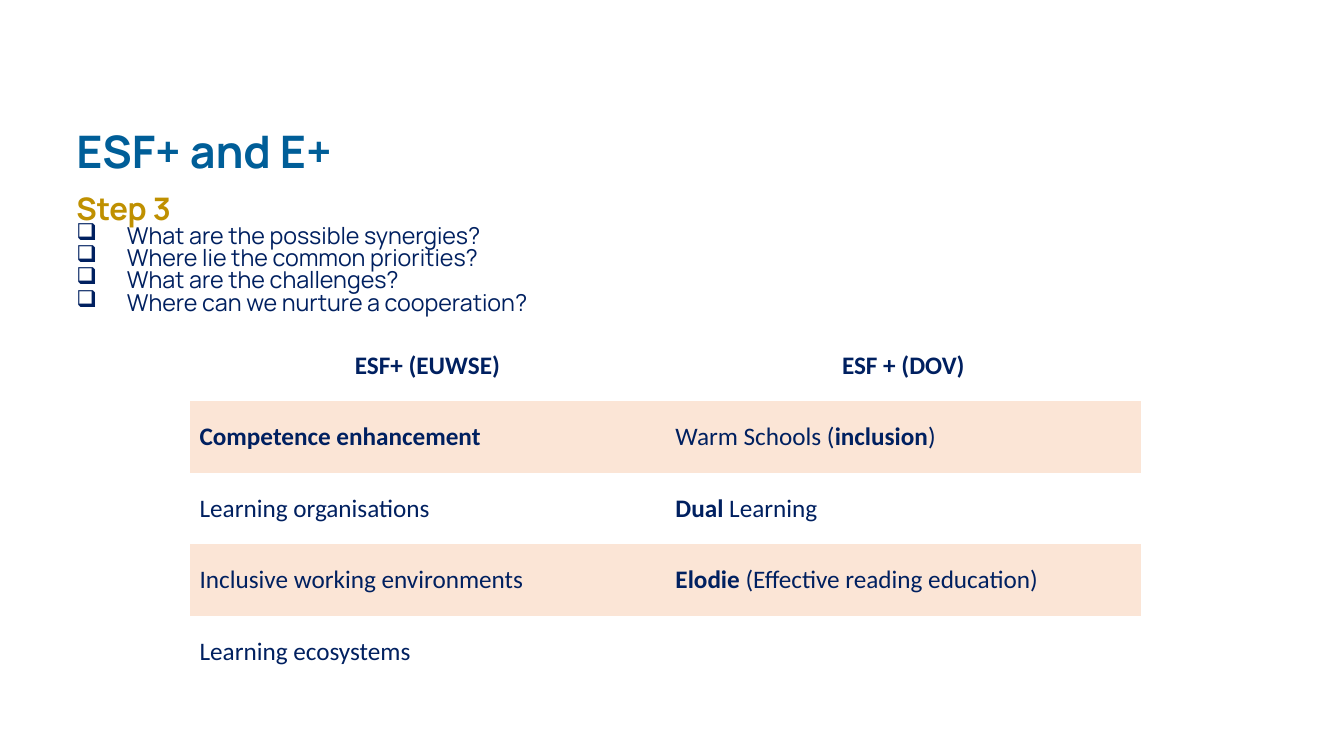
from lxml import etree
from pptx import Presentation
from pptx.dml.color import RGBColor
from pptx.enum.text import MSO_ANCHOR, PP_ALIGN
from pptx.oxml.ns import qn
from pptx.util import Inches, Pt

NAVY, BLUE, GOLD, PEACH = "002060", "005E98", "BF9000", "FBE5D6"
HEAD_FONT, TABLE_FONT = "Manrope", "Calibri"
NO_GRID_STYLE = "{2D5ABB26-0587-4C30-8999-92F81FD0307C}"
LEFT = 0.66
ROW_H, COL_W = 0.71, 4.72

QUESTIONS = [
    "What are the possible synergies?",
    "Where lie the common priorities?",
    "What are the challenges?",
    "Where can we nurture a cooperation?",
]

# Each cell is a list of (text, bold) runs
ROWS = [
    [[("ESF+ (EUWSE)", True)], [("ESF + (DOV)", True)]],
    [[("Competence enhancement", True)],
     [("Warm Schools (", False), ("inclusion", True), (")", False)]],
    [[("Learning organisations", False)],
     [("Dual", True), (" Learning", False)]],
    [[("Inclusive working environments", False)],
     [("Elodie ", True), ("(Effective reading education)", False)]],
    [[("Learning ecosystems", False)], []],
]


def rgb(hex_color):
    return RGBColor.from_string(hex_color)


def add_run(p, text, size, color, bold=False, font=HEAD_FONT):
    r = p.add_run()
    r.text = text
    r.font.name, r.font.size, r.font.bold = font, Pt(size), bold
    r.font.color.rgb = rgb(color)


def add_text_box(s, left, top, width, height, anchor=MSO_ANCHOR.TOP):
    sp = s.shapes.add_textbox(*map(Inches, (left, top, width, height)))
    tf = sp.text_frame
    tf.word_wrap = True
    tf.vertical_anchor = anchor
    return tf


def add_bullet(p, char, indent):
    pPr = p._p.get_or_add_pPr()
    pPr.set("marL", str(Inches(indent)))
    pPr.set("indent", str(-Inches(indent)))
    etree.SubElement(pPr, qn("a:buChar")).set("char", char)


def add_checklist(s, heading, items):
    tf = add_text_box(s, LEFT, 1.9, 11.87, 1.37)
    p = tf.paragraphs[0]
    p.line_spacing = 0.8
    add_run(p, heading, 22.2, GOLD, True)
    for item in items:
        p = tf.add_paragraph()
        add_bullet(p, "❑", 0.5)
        p.line_spacing = 0.8
        add_run(p, item, 16.6, NAVY)


def add_banded_table(s, rows, left, top):
    n_rows, n_cols = len(rows), len(rows[0])
    frame = s.shapes.add_table(n_rows, n_cols, Inches(left), Inches(top),
                               Inches(COL_W * n_cols), Inches(ROW_H * n_rows))
    table = frame.table
    table.first_row = table.horz_banding = False
    table._tbl.tblPr.find(qn("a:tableStyleId")).text = NO_GRID_STYLE
    for i, row in enumerate(rows):
        for j, runs in enumerate(row):
            cell = table.cell(i, j)
            cell.vertical_anchor = MSO_ANCHOR.MIDDLE
            if i % 2:
                cell.fill.solid()
                cell.fill.fore_color.rgb = rgb(PEACH)
            else:
                cell.fill.background()
            p = cell.text_frame.paragraphs[0]
            p.alignment = PP_ALIGN.LEFT if i else PP_ALIGN.CENTER
            for text, bold in runs:
                add_run(p, text, 18, NAVY, bold, TABLE_FONT)


def main():
    prs = Presentation()
    prs.slide_width, prs.slide_height = Inches(13.33), Inches(7.5)
    s = prs.slides.add_slide(prs.slide_layouts[6])

    # Title
    tf = add_text_box(s, LEFT, 0.9, 12.44, 1.25, MSO_ANCHOR.MIDDLE)
    p = tf.paragraphs[0]
    p.line_spacing = 0.9
    add_run(p, "ESF+ and E+", 32, BLUE, True)

    # Step and its questions
    add_checklist(s, "Step 3", QUESTIONS)

    # Comparison of the two programmes
    add_banded_table(s, ROWS, 1.88, 3.27)

    prs.save("out.pptx")


if __name__ == "__main__":
    main()
